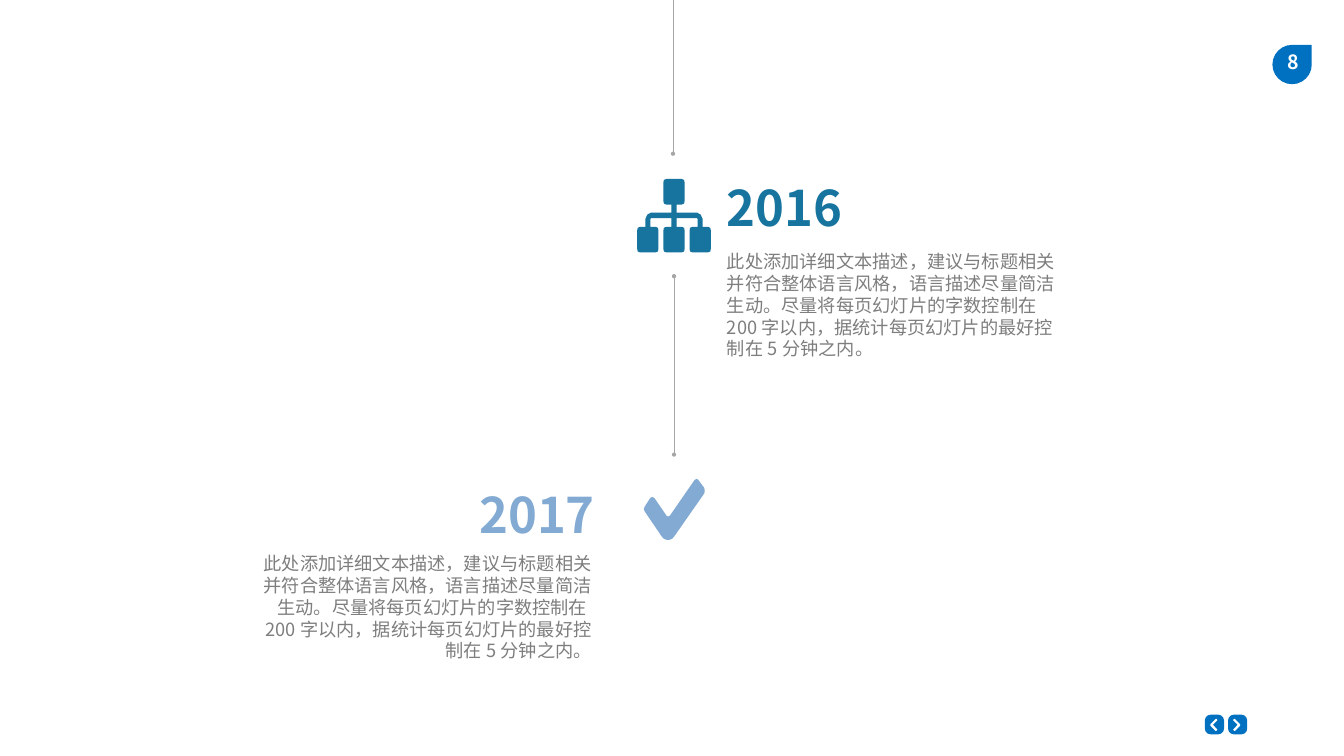
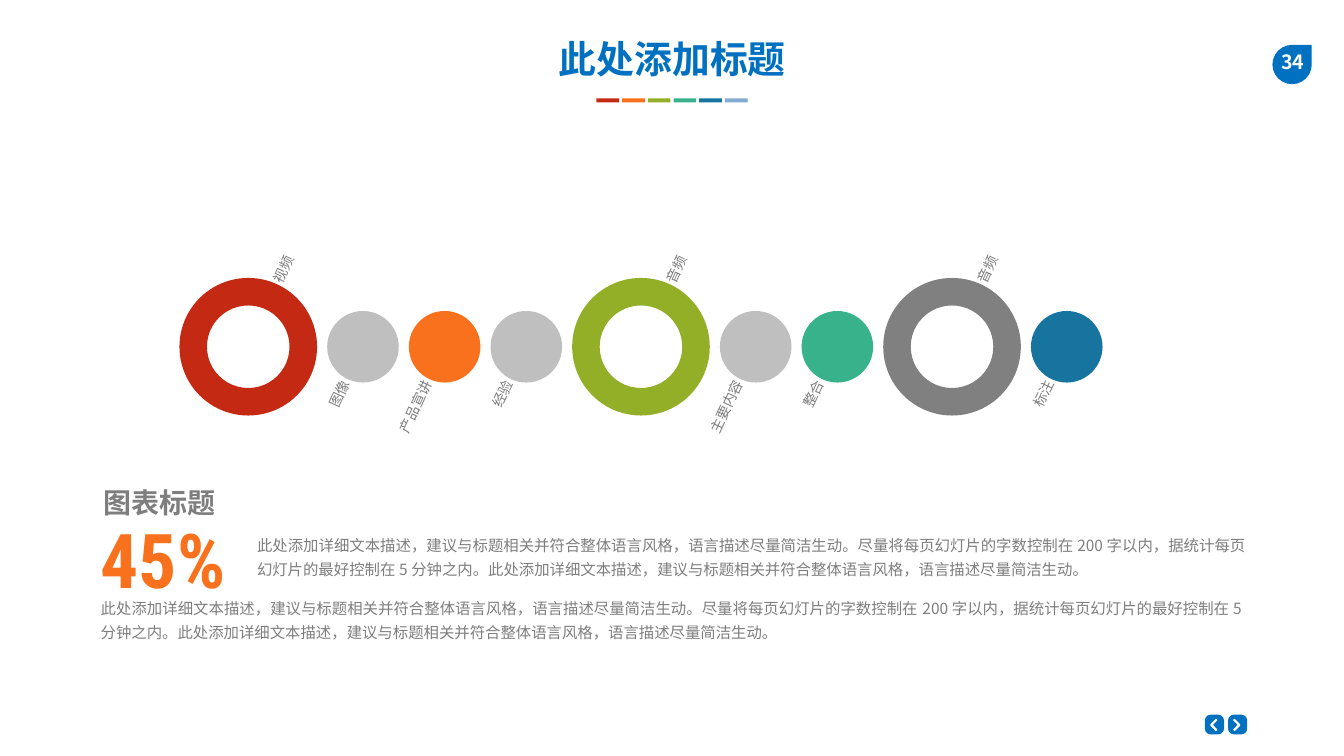
from lxml.etree import SubElement
from pptx import Presentation
from pptx.dml.color import RGBColor
from pptx.enum.shapes import MSO_CONNECTOR, MSO_SHAPE
from pptx.enum.text import MSO_ANCHOR, MSO_AUTO_SIZE, PP_ALIGN
from pptx.oxml.ns import qn
from pptx.util import Inches, Pt

BLUE = RGBColor(0x00, 0x70, 0xC0)
WHITE = RGBColor(0xFF, 0xFF, 0xFF)
TEXT_GRAY = RGBColor(0x7E, 0x7E, 0x7E)
LINE_GRAY = RGBColor(0xA6, 0xA6, 0xA6)
LIGHT_GRAY = RGBColor(0xBF, 0xBF, 0xBF)
MIDDLE_GRAY = RGBColor(0x80, 0x80, 0x80)
RED = RGBColor(0xC4, 0x2A, 0x13)
ORANGE = RGBColor(0xF9, 0x71, 0x1C)
GREEN = RGBColor(0x92, 0xAF, 0x27)
TEAL = RGBColor(0x38, 0xB2, 0x8A)
DEEP_BLUE = RGBColor(0x16, 0x74, 0x9F)
PALE_BLUE = RGBColor(0x82, 0xAA, 0xD2)

CJK_FONT = "Noto Sans CJK SC"
DESCRIPTION = (
    "此处添加详细文本描述，建议与标题相关并符合整体语言风格，语言描述尽量简洁生动。"
    "尽量将每页幻灯片的字数控制在200字以内，据统计每页幻灯片的最好控制在5分钟之内。"
)
LONG_DESCRIPTION = DESCRIPTION + "此处添加详细文本描述，建议与标题相关并符合整体语言风格，语言描述尽量简洁生动。"


def paint(shape, color):
    shape.shadow.inherit = False
    shape.fill.solid()
    shape.fill.fore_color.rgb = color
    shape.line.fill.background()


def write_text(shape, text, size, color, bold=False, align=PP_ALIGN.LEFT, font=CJK_FONT,
               anchor=MSO_ANCHOR.TOP, margins=(0.1, 0.05, 0.1, 0.05), wrap=True, spacing=None):
    frame = shape.text_frame
    frame.text = text
    frame.word_wrap = wrap
    frame.auto_size = MSO_AUTO_SIZE.NONE
    frame.vertical_anchor = anchor
    frame.margin_left, frame.margin_top, frame.margin_right, frame.margin_bottom = map(Inches, margins)
    paragraph = frame.paragraphs[0]
    paragraph.alignment = align
    paragraph.line_spacing = spacing
    run = paragraph.runs[0]
    run.font.size = Pt(size)
    run.font.bold = bold
    run.font.color.rgb = color
    run.font.name = font
    SubElement(run.font._element, qn("a:ea")).set("typeface", CJK_FONT)


presentation = Presentation()
presentation.slide_width = Inches(26.66)
presentation.slide_height = Inches(15)
timeline_slide = presentation.slides.add_slide(presentation.slide_layouts[6])
chart_slide = presentation.slides.add_slide(presentation.slide_layouts[5])

back_arrow = [(24.13, 14.26), (24.15, 14.29), (24.06, 14.38), (24.15, 14.48), (24.13, 14.5),
              (24.11, 14.5), (24.01, 14.4), (24.01, 14.37), (24.11, 14.27)]
next_arrow = [(48.61 - x, y) for x, y in back_arrow]

hierarchy_right = [
    (13.52, 3.55), (13.57, 3.57), (13.58, 3.62), (13.58, 3.99), (13.57, 4.04), (13.52, 4.06),
    (13.42, 4.06), (13.42, 4.22), (13.83, 4.22), (13.9, 4.26), (13.94, 4.35), (13.94, 4.5),
    (14.04, 4.5), (14.09, 4.52), (14.1, 4.57), (14.1, 4.94), (14.09, 4.99), (14.04, 5.01),
    (13.74, 5.01), (13.69, 4.99), (13.68, 4.94), (13.68, 4.57), (13.69, 4.52), (13.74, 4.5),
    (13.84, 4.5), (13.84, 4.35), (13.83, 4.33), (13.42, 4.33), (13.42, 4.5), (13.52, 4.5),
    (13.57, 4.52), (13.58, 4.57), (13.58, 4.94), (13.57, 4.99), (13.52, 5.01),
]
hierarchy = hierarchy_right + [(26.74 - x, y) for x, y in reversed(hierarchy_right)]

check_mark = [
    (13.22, 10.71), (13.17, 10.69), (13.13, 10.65), (12.79, 10.15), (12.77, 10.1), (12.79, 10.05),
    (12.9, 9.88), (12.94, 9.86), (12.98, 9.88), (13.22, 10.23), (13.25, 10.25), (13.29, 10.23),
    (13.78, 9.52), (13.82, 9.5), (13.85, 9.52), (13.97, 9.68), (13.98, 9.74), (13.97, 9.79),
    (13.37, 10.65), (13.33, 10.69), (13.28, 10.71),
]

outlines = [(timeline_slide, hierarchy, DEEP_BLUE), (timeline_slide, check_mark, PALE_BLUE)]

for slide, number in ((timeline_slide, "8"), (chart_slide, "34")):
    for left, arrow in ((23.9, back_arrow), (24.36, next_arrow)):
        button = slide.shapes.add_shape(
            MSO_SHAPE.ROUNDED_RECTANGLE, Inches(left), Inches(14.18), Inches(0.38), Inches(0.39))
        button.adjustments[0] = 0.3
        paint(button, BLUE)
        outlines.append((slide, arrow, WHITE))
    badge = slide.shapes.add_shape(
        MSO_SHAPE.TEAR, Inches(25.24), Inches(0.89), Inches(0.78), Inches(0.78))
    paint(badge, BLUE)
    page_number = slide.shapes.add_textbox(Inches(25.16), Inches(0.9), Inches(0.97), Inches(0.67))
    write_text(page_number, number, 28, WHITE, bold=True, align=PP_ALIGN.CENTER,
               margins=(0.2, 0.1, 0.2, 0.1), wrap=False)

for slide, points, color in outlines:
    corners = [(Inches(x), Inches(y)) for x, y in points]
    builder = slide.shapes.build_freeform(*corners[0])
    builder.add_line_segments(corners[1:], close=True)
    paint(builder.convert_to_shape(), color)

milestones = [
    ("2016", DEEP_BLUE, PP_ALIGN.LEFT, 14.22, 3.47, 14.22, 4.87),
    ("2017", PALE_BLUE, PP_ALIGN.RIGHT, 3.59, 9.56, 4.8, 10.86),
]
for year, color, align, year_left, year_top, text_left, text_top in milestones:
    description = timeline_slide.shapes.add_textbox(
        Inches(text_left), Inches(text_top), Inches(7.14), Inches(2.1))
    write_text(description, DESCRIPTION, 26, TEXT_GRAY, align=align, margins=(0.2, 0.1, 0.2, 0.1))
    heading = timeline_slide.shapes.add_textbox(
        Inches(year_left), Inches(year_top), Inches(8.41), Inches(1.29))
    write_text(heading, year, 70, color, bold=True, align=align, anchor=MSO_ANCHOR.MIDDLE,
               margins=(0.2, 0.1, 0.2, 0.1))

for x, start, end, dots in ((13.37, 5.48, 9.02, ("headEnd", "tailEnd")), (13.35, 3.05, 0, ("headEnd",))):
    connector = timeline_slide.shapes.add_connector(
        MSO_CONNECTOR.STRAIGHT, Inches(x), Inches(start), Inches(x), Inches(end))
    connector.line.color.rgb = LINE_GRAY
    connector.line.width = Pt(0.5)
    line = connector.line._get_or_add_ln()
    for dot in dots:
        SubElement(line, qn("a:" + dot)).set("type", "oval")
    SubElement(connector._element.spPr, qn("a:effectLst"))

title = chart_slide.shapes.title
title.left, title.top, title.width, title.height = map(Inches, (8.43, 0.65, 9.81, 1.01))
write_text(title, "此处添加标题", 54, BLUE, bold=True, align=PP_ALIGN.CENTER)

for index, color in enumerate((RED, ORANGE, GREEN, TEAL, DEEP_BLUE, PALE_BLUE)):
    bar = chart_slide.shapes.add_shape(
        MSO_SHAPE.RECTANGLE, Inches(11.83 + 0.51 * index), Inches(1.95), Inches(0.45), Inches(0.08))
    paint(bar, color)

circles = [
    ("视频", RED, True), ("图像", LIGHT_GRAY, False), ("产品宣讲", ORANGE, False),
    ("经验", LIGHT_GRAY, False), ("音频", GREEN, True), ("主要内容", LIGHT_GRAY, False),
    ("整合", TEAL, False), ("音频", MIDDLE_GRAY, True), ("标注", DEEP_BLUE, False),
]
circle_left = 3.56
circle_middle = 6.88
circle_gap = 0.2
for name, color, is_ring in circles:
    if is_ring:
        kind, diameter = MSO_SHAPE.DONUT, 2.73
        label_area = (circle_left + 0.96, 3.3, 3.39, 1.63)
        align, margins = PP_ALIGN.LEFT, (0.06, 0, 0, 0)
    else:
        kind, diameter = MSO_SHAPE.OVAL, 1.42
        label_area = (circle_left - 1.68, 8.14, 2.93, 1.41)
        align, margins = PP_ALIGN.RIGHT, (0, 0, 0.06, 0)
    circle = chart_slide.shapes.add_shape(
        kind, Inches(circle_left), Inches(circle_middle - diameter / 2), Inches(diameter), Inches(diameter))
    if is_ring:
        circle.adjustments[0] = 0.2
    paint(circle, color)
    label = chart_slide.shapes.add_textbox(*map(Inches, label_area))
    label.rotation = 295
    write_text(label, name, 20, TEXT_GRAY, align=align, font="Manrope",
               anchor=MSO_ANCHOR.MIDDLE, margins=margins, spacing=0.9)
    circle_left += diameter + circle_gap

for left, top, width in ((1.9, 11.72, 22.9), (5, 10.47, 19.8)):
    description = chart_slide.shapes.add_textbox(Inches(left), Inches(top), Inches(width), Inches(1.06))
    write_text(description, LONG_DESCRIPTION, 22, TEXT_GRAY, align=PP_ALIGN.JUSTIFY, spacing=1.3)

chart_heading = chart_slide.shapes.add_textbox(Inches(1.95), Inches(9.58), Inches(2.45), Inches(0.77))
write_text(chart_heading, "图表标题", 40, TEXT_GRAY, bold=True, wrap=False)
percentage = chart_slide.shapes.add_textbox(Inches(1.9), Inches(10.12), Inches(3.59), Inches(1.92))
write_text(percentage, "45%", 108, ORANGE, bold=True, font="Roboto Condensed")

presentation.save("out.pptx")
